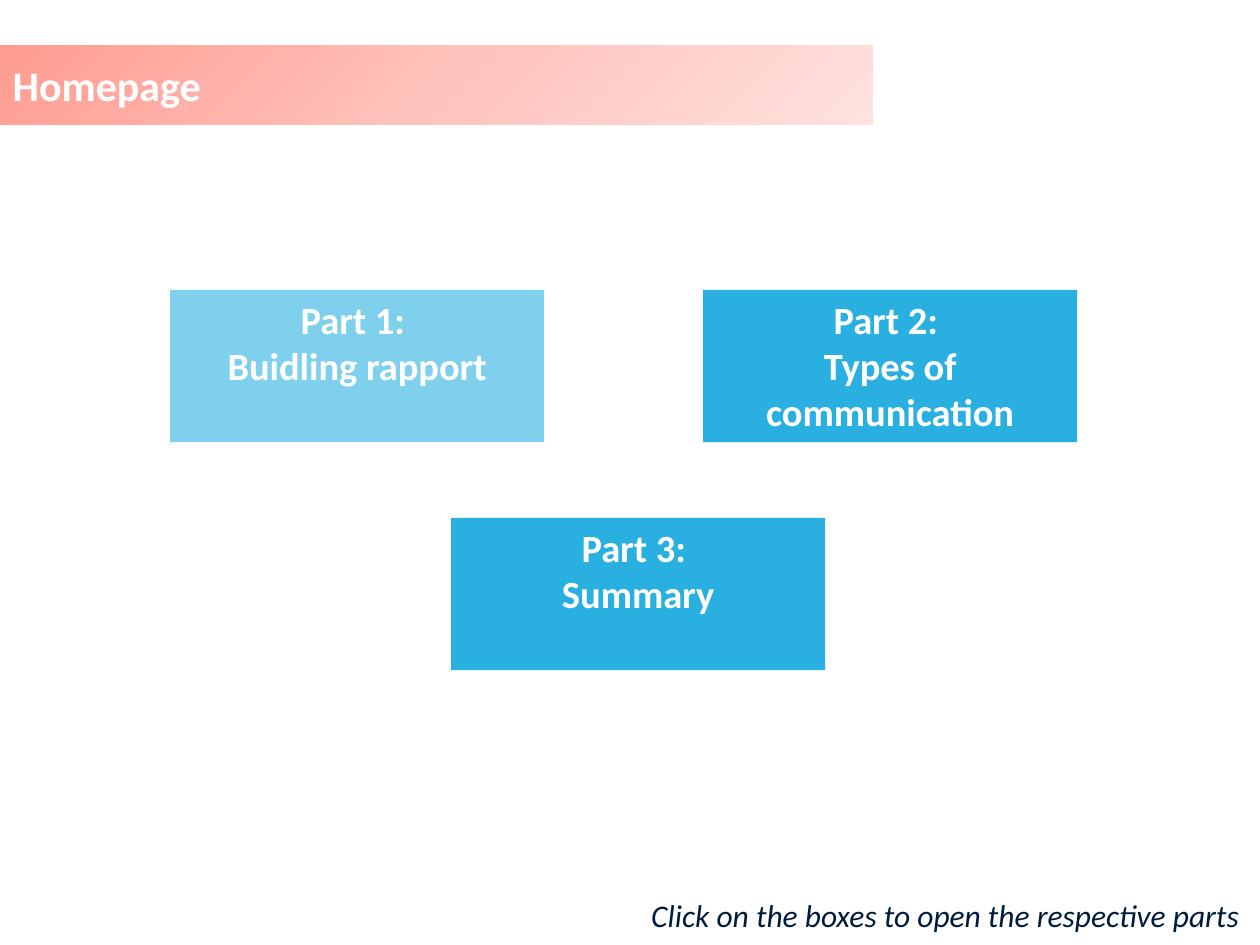
from lxml.etree import SubElement
from pptx import Presentation
from pptx.dml.color import RGBColor
from pptx.enum.shapes import MSO_SHAPE as Shape
from pptx.enum.text import MSO_ANCHOR as Anchor, PP_ALIGN as Align
from pptx.oxml import parse_xml
from pptx.oxml.ns import nsdecls, qn
from pptx.util import Inches, Pt


def style(par, size, color, bold=False, italic=False):
    font = par.font
    font.name, font.size = "Calibri", Pt(size)
    font.bold, font.italic = bold, italic
    font.color.rgb = RGBColor.from_string(color)


deck = Presentation()
deck.slide_width, deck.slide_height = Inches(10), Inches(7.5)
slide = deck.slides.add_slide(deck.slide_layouts[5])

# Title banner: an arrow-ended bar with a radial fade from its top left
title = slide.shapes.title
title.left, title.top = 0, Inches(0.36)
title.width, title.height = Inches(6.93), Inches(0.63)
stops = "".join(
    f'<a:gs pos="{pos}000"><a:srgbClr val="{color}"/></a:gs>'
    for pos, color in [(0, "FF9C91"), (50, "FFC2BC"), (100, "FFE1DE")])
props = title.element.spPr
props.append(parse_xml(
    f'<a:prstGeom {nsdecls("a")} prst="homePlate"><a:avLst/></a:prstGeom>'))
props.append(parse_xml(
    f'<a:gradFill {nsdecls("a")} rotWithShape="1"><a:gsLst>{stops}</a:gsLst>'
    '<a:path path="circle"><a:fillToRect r="100000" b="100000"/></a:path>'
    '</a:gradFill>'))
title.text = "Homepage"
title.text_frame.vertical_anchor = Anchor.MIDDLE
head = title.text_frame.paragraphs[0]
head.alignment = Align.LEFT
style(head, 24, "FFFFFF", bold=True)

# Part boxes: the current part is paler
wide, high = Inches(2.97), Inches(1.21)
parts = [
    (1.35, 2.3, 50, "Part 1: ", "Buidling rapport"),
    (5.58, 2.3, 84, "Part 2: ", "Types of communication"),
    (3.58, 4.11, 84, "Part 3: ", "Summary"),
]
for left, top, alpha, label, topic in parts:
    box = slide.shapes.add_shape(
        Shape.RECTANGLE, Inches(left), Inches(top), wide, high)
    box.shadow.inherit = False
    box.line.fill.background()
    box.fill.solid()
    box.fill.fore_color.rgb = RGBColor.from_string("00A2DB")
    tint = box.element.spPr.find(qn("a:solidFill"))[0]
    SubElement(tint, qn("a:alpha"), val=f"{alpha}000")
    frame = box.text_frame
    frame.vertical_anchor = Anchor.TOP
    frame.text = f"{label}\n{topic}"
    for par in frame.paragraphs:
        par.alignment = Align.CENTER
        style(par, 22, "FFFFFF", bold=True)

# Hint at the bottom right
hint = slide.shapes.add_textbox(
    Inches(5.07), Inches(7.06), Inches(4.92), Inches(0.4))
hint.text_frame.word_wrap = False
hint.text_frame.text = "Click on the boxes to open the respective parts"
style(hint.text_frame.paragraphs[0], 18, "001C3D", italic=True)

deck.save("out.pptx")
